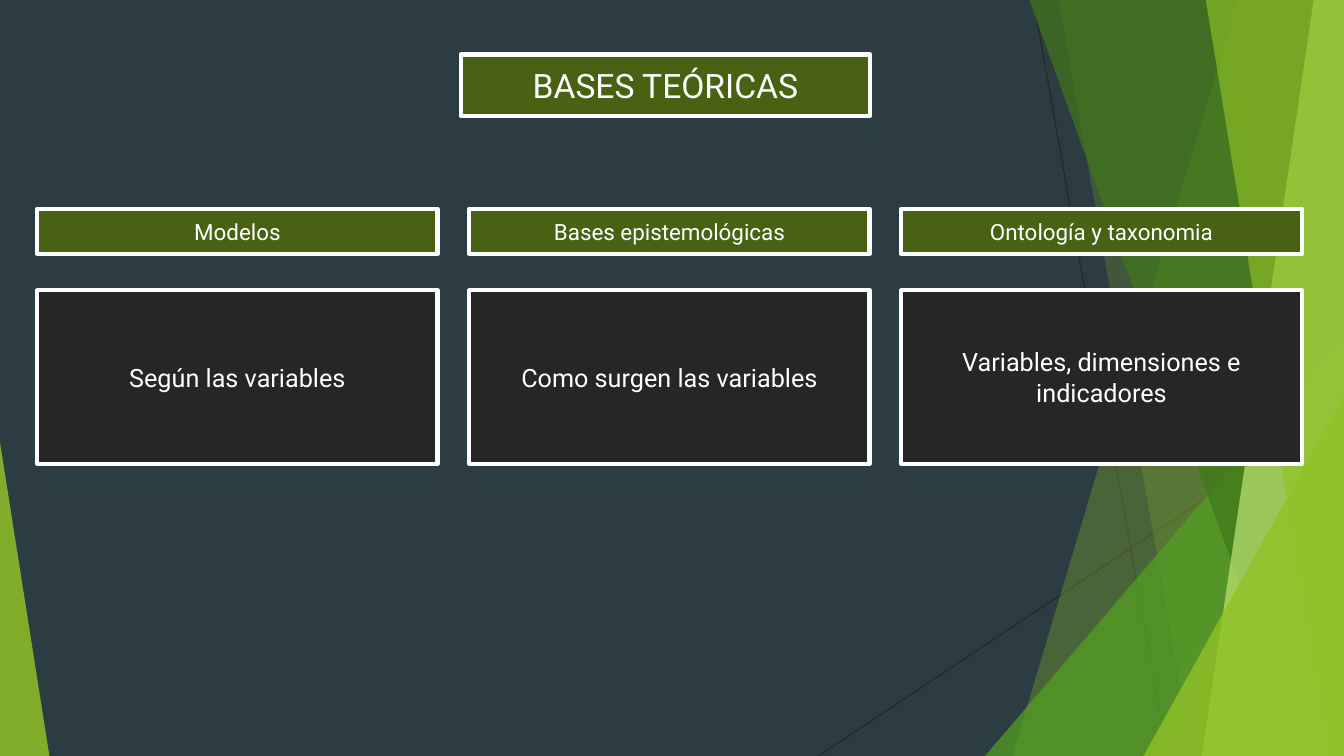
"""Build the "Bases teóricas" slide: a title over three columns on a faceted green backdrop."""
from lxml import etree
from pptx import Presentation
from pptx.dml.color import RGBColor
from pptx.enum.shapes import MSO_CONNECTOR, MSO_SHAPE
from pptx.enum.text import MSO_ANCHOR, PP_ALIGN
from pptx.oxml.ns import qn
from pptx.util import Inches, Pt

RECTANGLE = MSO_SHAPE.RECTANGLE
TRIANGLE = MSO_SHAPE.ISOSCELES_TRIANGLE
STRAIGHT = MSO_CONNECTOR.STRAIGHT
MIDDLE = MSO_ANCHOR.MIDDLE
CENTER = PP_ALIGN.CENTER

SLATE = RGBColor(0x2C, 0x3C, 0x43)
CHARCOAL = RGBColor(0x26, 0x26, 0x26)
WHITE = RGBColor(0xFF, 0xFF, 0xFF)
OLIVE = RGBColor(0x48, 0x61, 0x13)
LIME = RGBColor(0x90, 0xC2, 0x26)
PALE_LIME = RGBColor(0xC0, 0xE4, 0x74)
GREEN = RGBColor(0x54, 0xA0, 0x21)
FOREST = RGBColor(0x3F, 0x78, 0x19)

WIDTH, HEIGHT = 13.33, 7.5
COLUMN_LEFT, COLUMN_STEP, COLUMN_WIDTH = 0.37, 4.285, 3.97
HEADING_TOP, HEADING_HEIGHT = 2.07, 0.45
DETAIL_TOP, DETAIL_HEIGHT = 2.88, 1.72


def paint_facet(shape, colour, opacity):
    """Fill a borderless shape with a see-through colour."""
    shape.shadow.inherit = False
    shape.line.fill.background()
    shape.fill.solid()
    shape.fill.fore_color.rgb = colour
    tone = shape.fill._xPr.find(qn("a:solidFill"))[0]
    etree.SubElement(tone, qn("a:alpha"), val=str(opacity * 1000))


def add_label(text, left, top, width, height, *, size, fill):
    """Add a white-framed box with centred text."""
    box = page.shapes.add_shape(RECTANGLE, Inches(left), Inches(top), Inches(width), Inches(height))
    box.shadow.inherit = False
    box.fill.solid()
    box.fill.fore_color.rgb = fill
    box.line.color.rgb = WHITE
    box.line.width = Pt(3)
    box.text_frame.word_wrap = True
    box.text_frame.vertical_anchor = MIDDLE
    para = box.text_frame.paragraphs[0]
    para.alignment = CENTER
    span = para.add_run()
    span.text = text
    span.font.name = "Roboto"
    span.font.size = Pt(size)
    span.font.color.rgb = WHITE


deck = Presentation()
deck.slide_width, deck.slide_height = Inches(WIDTH), Inches(HEIGHT)
page = deck.slides.add_slide(deck.slide_layouts[6])
page.background.fill.solid()
page.background.fill.fore_color.rgb = SLATE

for start_x, start_y, end_x in [(10.25, 0, 11.58), (WIDTH, 4.03, 8.12)]:
    line = page.shapes.add_connector(
        STRAIGHT, Inches(start_x), Inches(start_y), Inches(end_x), Inches(HEIGHT))
    line.line.color.rgb = CHARCOAL
    line.line.width = Pt(0.75)
    etree.SubElement(line._element.spPr, qn("a:effectLst"))

facets = [
    ("band", (12.28, 10.04), LIME, 30),
    ("band", (10.5, 11.83), LIME, 20),
    ("right corner", (3.56, 4.17), GREEN, 72),
    ("band", (10.21, 12.91), FOREST, 70),
    ("band", (13.03, 11.92), PALE_LIME, 70),
    ("band", (11.96, 13.18), LIME, 65),
    ("right corner", (1.99, 3.57), LIME, 80),
    ("left corner", (0.49, 3.11), LIME, 85),
]
for kind, measures, colour, opacity in facets:
    if kind == "band":
        top_x, bottom_x = measures
        outline = page.shapes.build_freeform(Inches(top_x), 0)
        outline.add_line_segments([
            (Inches(x), Inches(y))
            for x, y in [(WIDTH, 0), (WIDTH, HEIGHT), (bottom_x, HEIGHT)]])
        facet = outline.convert_to_shape()
    else:
        width, height = measures
        at_right = kind == "right corner"
        left = WIDTH - width if at_right else 0
        facet = page.shapes.add_shape(
            TRIANGLE, Inches(left), Inches(HEIGHT - height), Inches(width), Inches(height))
        facet.adjustments[0] = 1 if at_right else 0
    paint_facet(facet, colour, opacity)

add_label("BASES TEÓRICAS", 4.57, 0.54, 4.06, 0.61, size=24, fill=OLIVE)

columns = [
    ("Modelos", "Según las variables"),
    ("Bases epistemológicas", "Como surgen las variables"),
    ("Ontología y taxonomia", "Variables, dimensiones e indicadores"),
]
for index, (heading, detail) in enumerate(columns):
    left = COLUMN_LEFT + index * COLUMN_STEP
    add_label(heading, left, HEADING_TOP, COLUMN_WIDTH, HEADING_HEIGHT, size=16, fill=OLIVE)
    add_label(detail, left, DETAIL_TOP, COLUMN_WIDTH, DETAIL_HEIGHT, size=18, fill=CHARCOAL)

deck.save("out.pptx")
